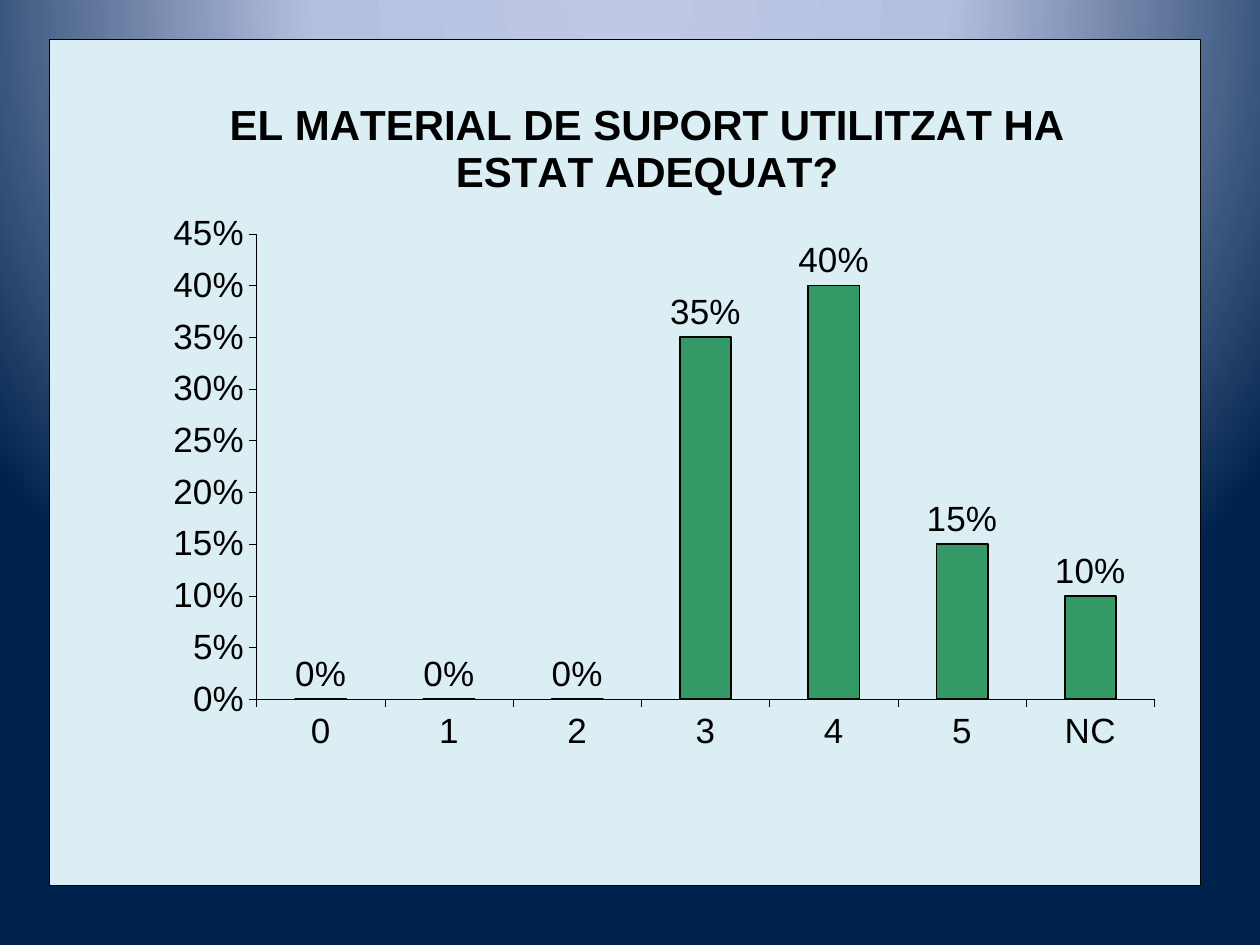
import pptx
import pptx.chart.data
import pptx.dml.color
import pptx.enum.chart
import pptx.oxml
import pptx.oxml.ns
import pptx.util
from pptx.util import Inches

COLORS = {
    "text": "000000",
    "panel": "DBEEF4",
    "bar": "339966",
    "glow": "BFC9E5",
    "haze": "B5C0E0",
    "night": "00234D",
}
NAMESPACES = pptx.oxml.ns.nsdecls("a", "c")
qn = pptx.oxml.ns.qn

CATEGORIES = ["0", "1", "2", "3", "4", "5", "NC"]
SHARES = [0, 0, 0, 0.35, 0.4, 0.15, 0.1]


def rgb(name):
    return pptx.dml.color.RGBColor.from_string(COLORS[name])


def set_attributes(target, values):
    for name, value in values.items():
        setattr(target, name, value)


def format_font(font, size, bold):
    set_attributes(font, {"name": "Arial", "size": pptx.util.Pt(size), "bold": bold})
    font.color.rgb = rgb("text")


def format_line(line, width):
    line.color.rgb = rgb("text")
    line.width = pptx.util.Pt(width)


def set_layout(element, index, values, inner=False):
    """Place a chart part by fractions of the chart area."""
    for old_layout in element.findall(qn("c:layout")):
        element.remove(old_layout)
    target = '<c:layoutTarget val="inner"/>' if inner else ""
    modes = '<c:xMode val="edge"/><c:yMode val="edge"/>'
    numbers = "".join(f'<c:{key} val="{value}"/>' for key, value in values.items())
    element.insert(index, pptx.oxml.parse_xml(
        f"<c:layout {NAMESPACES}><c:manualLayout>{target}{modes}{numbers}"
        "</c:manualLayout></c:layout>"))


def paint_background(slide):
    """Radial glow centred above the slide."""
    fill = slide.background.fill
    fill.gradient()
    stops = "".join(
        f'<a:gs pos="{position * 1000}"><a:srgbClr val="{COLORS[name]}"/></a:gs>'
        for position, name in [(0, "glow"), (40, "haze"), (100, "night")])
    gradient = pptx.oxml.parse_xml(
        f'<a:gradFill {NAMESPACES} rotWithShape="1"><a:gsLst>{stops}</a:gsLst>'
        '<a:path path="circle">'
        '<a:fillToRect l="50000" t="-80000" r="50000" b="180000"/>'
        "</a:path></a:gradFill>")
    old_gradient = next(slide.element.iter(qn("a:gradFill")))
    old_gradient.getparent().replace(old_gradient, gradient)


def add_survey_chart(slide, left, top, width, height):
    data = pptx.chart.data.CategoryChartData(number_format="0%")
    data.categories = CATEGORIES
    data.add_series("Series 1", SHARES)
    chart = slide.shapes.add_chart(
        pptx.enum.chart.XL_CHART_TYPE.COLUMN_CLUSTERED,
        left, top, width, height, data).chart
    chart.has_legend = False
    format_font(chart.font, 20, False)

    # Panel behind the chart
    chart.element.find(qn("c:chart")).addnext(pptx.oxml.parse_xml(
        f'<c:spPr {NAMESPACES}><a:solidFill><a:srgbClr val="{COLORS["panel"]}"/>'
        f'</a:solidFill><a:ln w="{pptx.util.Pt(0.25)}"><a:solidFill>'
        f'<a:srgbClr val="{COLORS["text"]}"/></a:solidFill></a:ln></c:spPr>'))

    # Title
    chart.has_title = True
    paragraph = chart.chart_title.text_frame.paragraphs[0]
    run = paragraph.add_run()
    run.text = "EL MATERIAL DE SUPORT UTILITZAT HA ESTAT ADEQUAT?"
    format_font(run.font, 24, True)
    chart.chart_title.include_in_layout = False
    set_layout(chart.chart_title.element, 1, {"x": 0.15, "y": 0.06})

    # Axes
    ticks = pptx.enum.chart.XL_TICK_MARK
    for axis in (chart.category_axis, chart.value_axis):
        set_attributes(axis, {
            "has_major_gridlines": False,
            "major_tick_mark": ticks.OUTSIDE,
            "minor_tick_mark": ticks.NONE,
        })
        format_line(axis.format.line, 0.25)
    set_attributes(chart.value_axis, {
        "minimum_scale": 0, "maximum_scale": 0.45, "major_unit": 0.05})
    set_attributes(chart.value_axis.tick_labels, {
        "number_format": "0%", "number_format_is_linked": False})

    # Bars and their labels
    plot = chart.plots[0]
    set_attributes(plot, {
        "gap_width": 150, "vary_by_categories": False, "has_data_labels": True})
    set_attributes(plot.data_labels, {
        "show_value": True,
        "number_format": "0%",
        "number_format_is_linked": False,
        "position": pptx.enum.chart.XL_LABEL_POSITION.OUTSIDE_END,
    })
    bars = plot.series[0].format
    bars.fill.solid()
    bars.fill.fore_color.rgb = rgb("bar")
    format_line(bars.line, 1)
    plot_area = next(chart.element.iter(qn("c:plotArea")))
    set_layout(plot_area, 0, {"x": 0.18, "y": 0.23, "w": 0.78, "h": 0.55}, inner=True)


def main():
    presentation = pptx.Presentation()
    set_attributes(presentation, {
        "slide_width": Inches(10), "slide_height": Inches(7.5)})
    slide = presentation.slides.add_slide(presentation.slide_layouts[6])
    paint_background(slide)
    add_survey_chart(slide, Inches(0.39), Inches(0.31), Inches(9.14), Inches(6.72))
    presentation.save("out.pptx")


if __name__ == "__main__":
    main()
